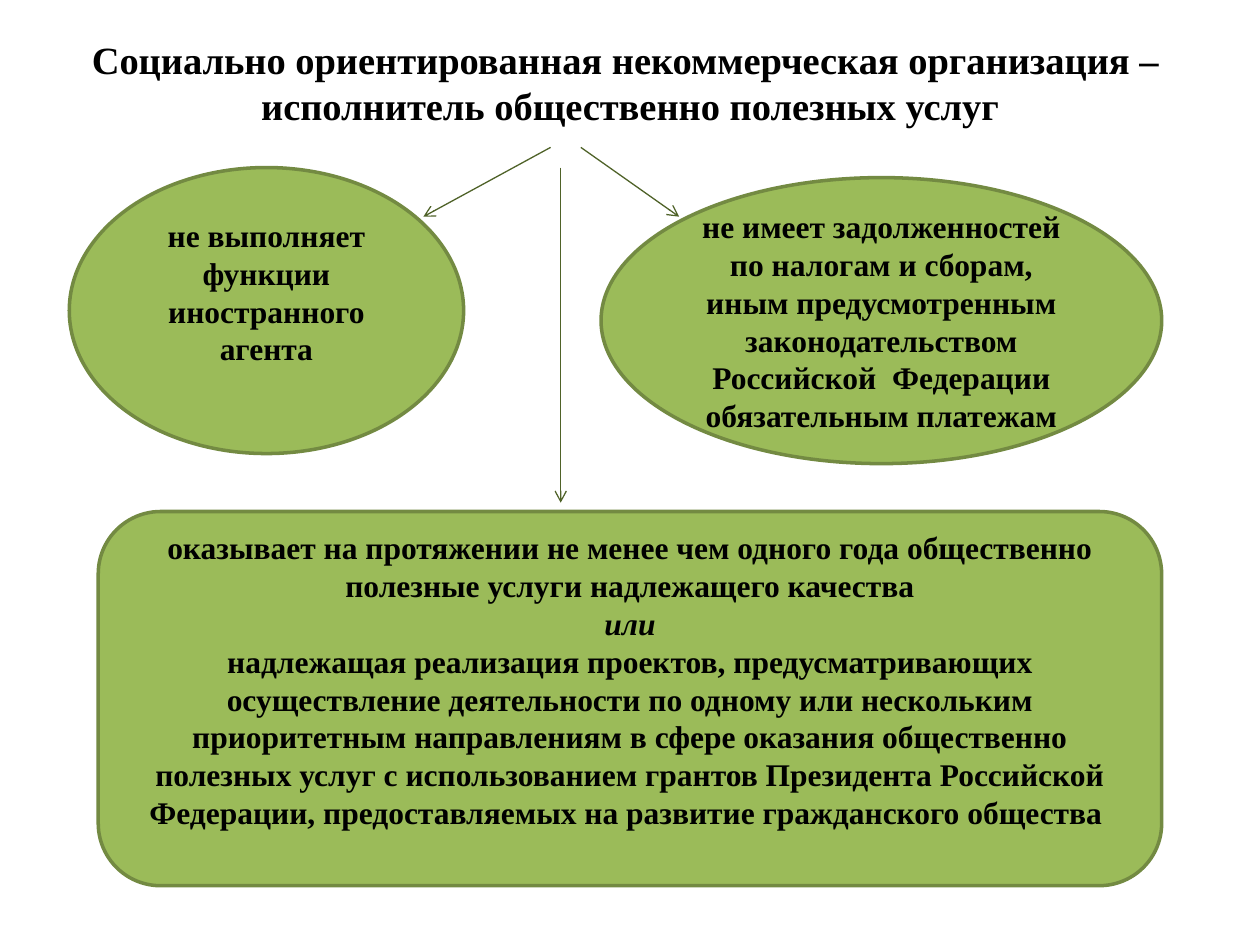
"""Builds a slide on the conditions for a provider of socially useful services."""
from lxml.etree import SubElement
from pptx import Presentation
from pptx.dml.color import RGBColor
from pptx.enum.shapes import MSO_CONNECTOR, MSO_SHAPE
from pptx.enum.text import MSO_ANCHOR, MSO_AUTO_SIZE, PP_ALIGN
from pptx.oxml.ns import qn
from pptx.util import Inches, Pt

THEME = {
    "font": "Times New Roman", "title_size": 22, "body_size": 18,
    "text": RGBColor(0, 0, 0), "fill": RGBColor(0x9B, 0xBB, 0x59),
    "border": RGBColor(0x73, 0x8A, 0x42), "arrow": RGBColor(0x4F, 0x62, 0x28),
}
TITLE = [
    "Социально ориентированная некоммерческая организация – ",
    "исполнитель общественно полезных услуг",
]
TITLE_AREA = (0, 0.23, 10, 0.84)
CONDITIONS = [
    {"kind": MSO_SHAPE.OVAL, "area": (0.55, 1.33, 3.13, 2.27), "bottom": 0.35,
     "lines": ["не выполняет функции иностранного агента"]},
    {"kind": MSO_SHAPE.OVAL, "area": (4.77, 1.41, 4.45, 2.27), "bottom": 0.05,
     "lines": ["не имеет задолженностей по налогам и сборам, иным предусмотренным "
               "законодательством Российской  Федерации обязательным платежам"]},
    {"kind": MSO_SHAPE.ROUNDED_RECTANGLE, "area": (0.78, 4.06, 8.44, 2.97), "bottom": 0.35,
     "lines": ["оказывает на протяжении не менее чем одного года общественно "
               "полезные услуги надлежащего качества",
               "или",
               "надлежащая реализация проектов, предусматривающих осуществление "
               "деятельности по одному или нескольким приоритетным направлениям в сфере "
               "оказания общественно полезных услуг с использованием грантов Президента "
               "Российской Федерации, предоставляемых на развитие гражданского общества "]},
]
ITALIC_LINES = {"или"}
ARROWS = [(4.37, 1.17, 3.36, 1.72), (4.61, 1.17, 5.39, 1.72), (4.45, 1.33, 4.45, 3.99)]


def inches(values):
    """Converts plain numbers to lengths."""
    return [Inches(value) for value in values]


def write_text(box, lines, size, bottom=0.05):
    """Fills a box with centred bold paragraphs."""
    frame = box.text_frame
    frame.word_wrap = True
    frame.auto_size = MSO_AUTO_SIZE.NONE
    frame.vertical_anchor = MSO_ANCHOR.MIDDLE
    frame.margin_bottom = Inches(bottom)
    for index, line in enumerate(lines):
        para = frame.add_paragraph() if index else frame.paragraphs[0]
        para.alignment = PP_ALIGN.CENTER
        span = para.add_run()
        span.text = line
        span.font.name = THEME["font"]
        span.font.size = Pt(size)
        span.font.bold = True
        span.font.italic = line in ITALIC_LINES
        span.font.color.rgb = THEME["text"]


def add_title(page):
    """Places the heading in the title placeholder."""
    title = page.shapes.title
    title.left, title.top, title.width, title.height = inches(TITLE_AREA)
    write_text(title, TITLE, THEME["title_size"])


def add_condition(page, condition):
    """Draws one green shape with its condition."""
    box = page.shapes.add_shape(condition["kind"], *inches(condition["area"]))
    box.shadow.inherit = False
    box.fill.solid()
    box.fill.fore_color.rgb = THEME["fill"]
    box.line.color.rgb = THEME["border"]
    box.line.width = Pt(2)
    write_text(box, condition["lines"], THEME["body_size"], bottom=condition["bottom"])


def add_arrow(page, ends):
    """Draws a thin line with an open arrowhead at its end."""
    arrow = page.shapes.add_connector(MSO_CONNECTOR.STRAIGHT, *inches(ends))
    arrow.line.color.rgb = THEME["arrow"]
    arrow.line.width = Pt(0.75)
    properties = arrow.element.spPr
    SubElement(properties.find(qn("a:ln")), qn("a:tailEnd"), type="arrow")
    SubElement(properties, qn("a:effectLst"))


def main():
    """Builds and saves the deck."""
    deck = Presentation()
    deck.slide_width, deck.slide_height = inches((10, 7.5))
    page = deck.slides.add_slide(deck.slide_layouts[5])
    add_title(page)
    for condition in CONDITIONS:
        add_condition(page, condition)
    for ends in ARROWS:
        add_arrow(page, ends)
    deck.save("out.pptx")


if __name__ == "__main__":
    main()
